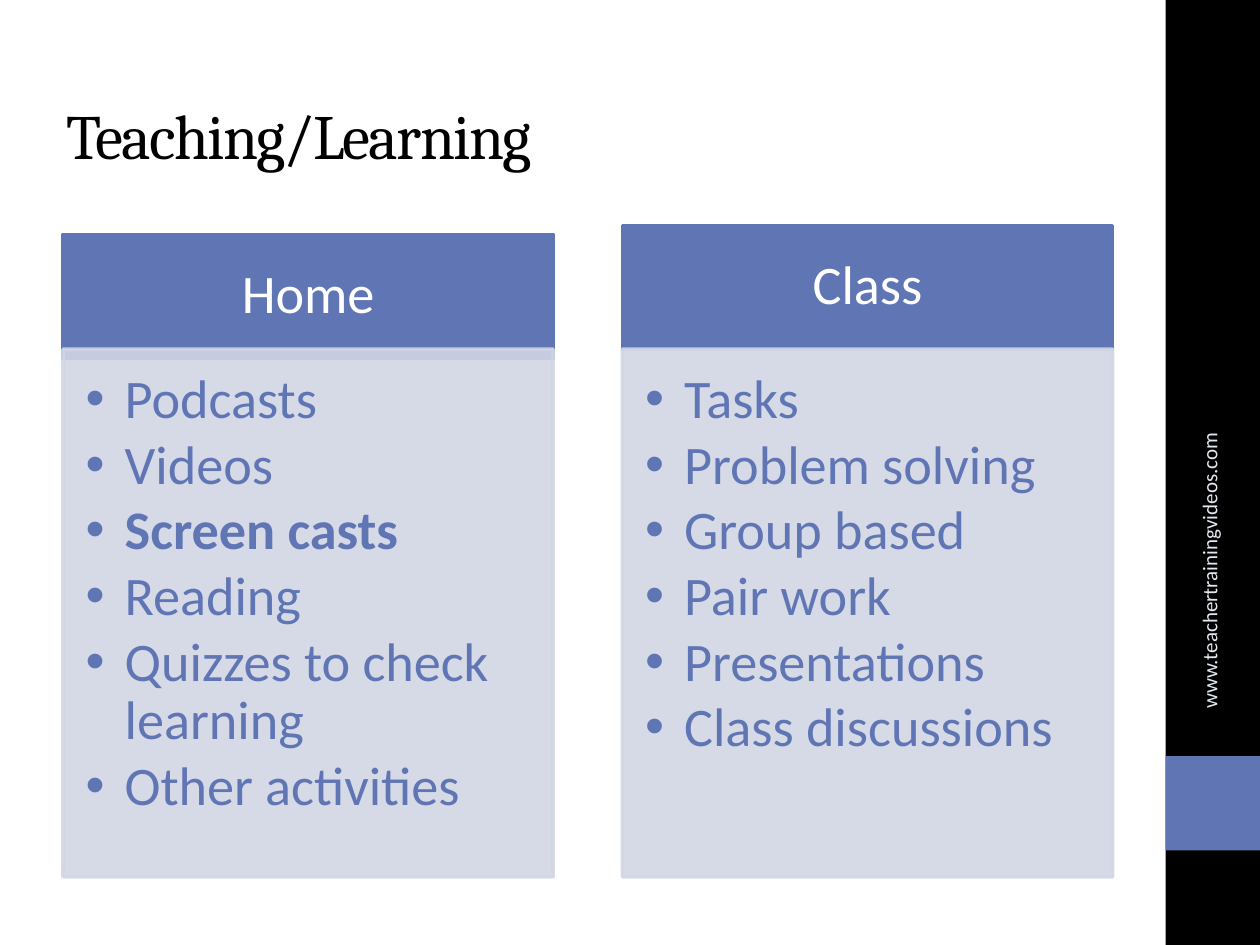
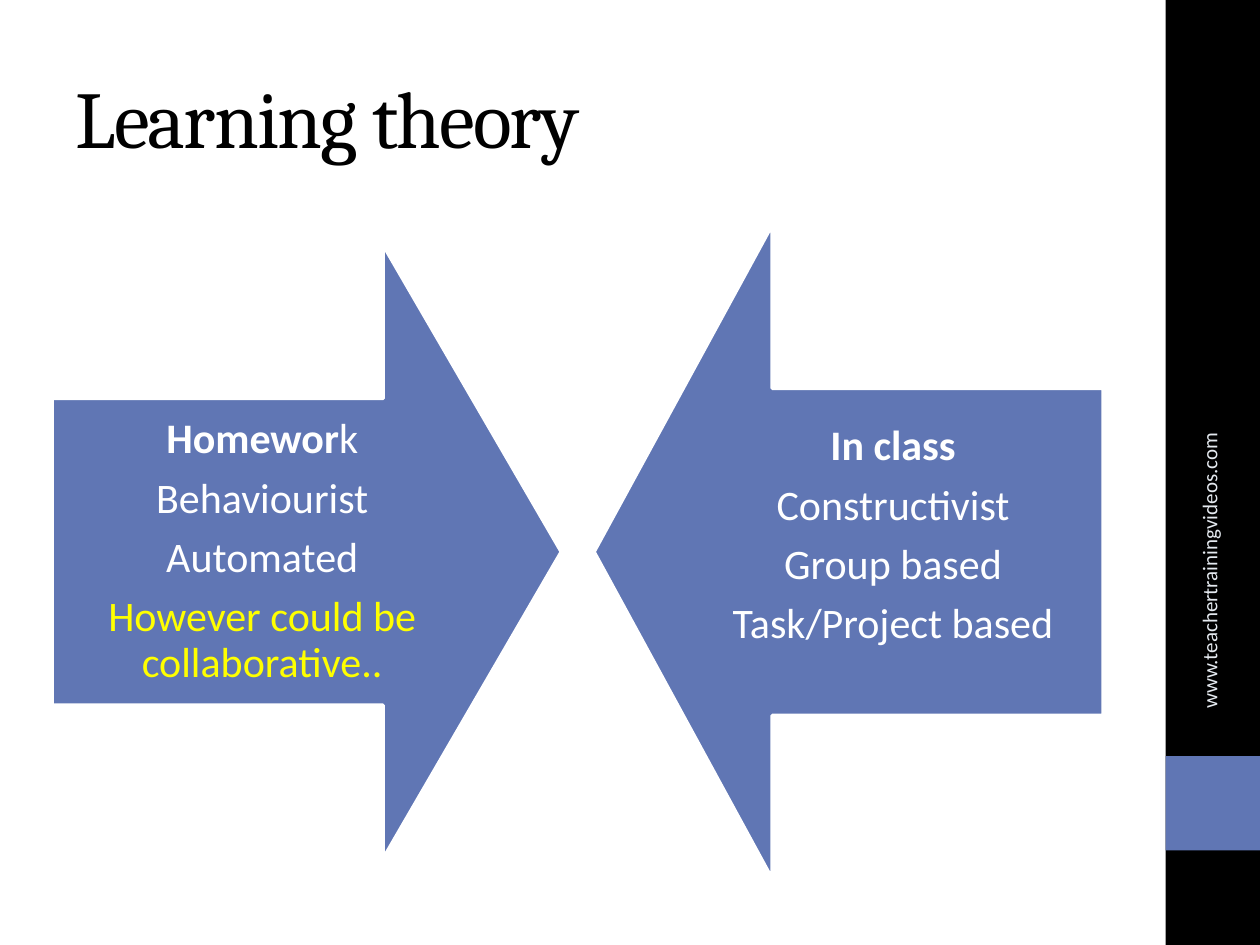
import pptx
import pptx.util
import pptx.dml.color
import pptx.enum.shapes
import pptx.enum.text
import pptx.oxml.ns
import lxml.etree

RGB = pptx.dml.color.RGBColor
BLACK = RGB(0x00, 0x00, 0x00)
WHITE = RGB(0xFF, 0xFF, 0xFF)
BLUE = RGB(0x60, 0x76, 0xB4)
PALE = RGB(0xD2, 0xD6, 0xE5)
MIST = RGB(0xE4, 0xE9, 0xEF)
YELLOW = RGB(0xFF, 0xFF, 0x00)

HEAD, TEXT = "Cambria", "Calibri"
KIND = pptx.enum.shapes.MSO_SHAPE
ALIGN = pptx.enum.text.PP_ALIGN
ANCHOR = pptx.enum.text.MSO_ANCHOR

# Grid of square cells
COLS, ROWS = 100, 75
WIDE, HIGH = pptx.util.Inches(10), pptx.util.Inches(7.5)
CELL = WIDE / COLS

# Layouts of the default template
PAIR, PLAIN = 4, 5


def cells(*sizes):
    return [round(size * CELL) for size in sizes]


def place(shape, box):
    shape.left, shape.top, shape.width, shape.height = cells(*box)


def paint(shape, fill, line=None, width=2):
    shape.fill.solid()
    shape.fill.fore_color.rgb = fill
    if line is None:
        shape.line.fill.background()
    else:
        shape.line.color.rgb = line
        shape.line.width = pptx.util.Pt(width)


def draw(slide, kind, box, fill, line=None):
    shape = slide.shapes.add_shape(kind, *cells(*box))
    shape.shadow.inherit = False
    paint(shape, fill, line)
    return shape


def fade(shape, share):
    """Make fill and line let the given share of their colour show."""
    tag = pptx.oxml.ns.qn("a:alpha")
    for color in shape.element.spPr.iter(pptx.oxml.ns.qn("a:srgbClr")):
        lxml.etree.SubElement(color, tag, val=str(round(share * 100000)))


def write(shape, lines, size=24, color=WHITE, font=TEXT, align=ALIGN.LEFT,
          anchor=ANCHOR.MIDDLE, pad=(1, 0.5, 1, 0.5), gap=0, lead=None,
          indent=None, track=None):
    """Fill a shape with lines; a line is a string or a list of (text, format)."""
    frame = shape.text_frame
    frame.word_wrap = True
    frame.auto_size = pptx.enum.text.MSO_AUTO_SIZE.NONE
    frame.vertical_anchor = anchor
    (frame.margin_left, frame.margin_top,
     frame.margin_right, frame.margin_bottom) = cells(*pad)
    for i, line in enumerate(lines):
        para = frame.add_paragraph() if i else frame.paragraphs[0]
        para.alignment = align
        para.space_before = pptx.util.Pt(0)
        para.space_after = pptx.util.Pt(gap)
        para.line_spacing = lead
        if indent is not None:
            props = para._p.get_or_add_pPr()
            step = cells(indent)[0]
            props.set("marL", str(step))
            props.set("indent", str(-step))
        for part, form in [(line, {})] if isinstance(line, str) else line:
            run = para.add_run()
            run.text = part
            run.font.name = font
            run.font.size = pptx.util.Pt(size)
            run.font.bold = form.get("bold", False)
            run.font.color.rgb = form.get("color", color)
            if track is not None:
                run.font._element.set("spc", str(track * 100))


def band(deck, slide):
    """Put the side band on the master, so that all slides share it."""
    side = 92.5
    wide = COLS - side
    tree = deck.slide_master.shapes.element
    for i, (box, fill) in enumerate([((side, 0, wide, ROWS), BLACK),
                                     ((side, 60, wide, wide), BLUE)]):
        shape = draw(slide, KIND.RECTANGLE, box, fill)
        shape.element.xpath("./p:nvSpPr/p:cNvPr")[0].set("id", str(101 + i))
        tree.append(shape.element)


def top(slide, text, left, y, size):
    title = slide.shapes.title
    place(title, (left, y, 48.1, 12.5))
    write(title, [text], size=size, color=BLACK, font=HEAD, track=-1)


def site(slide):
    box = slide.shapes.add_textbox(*cells(83, 44.3, 25.9, 4))
    box.rotation = 270
    write(box, ["www.teachertrainingvideos.com"], size=12, color=MIST,
          align=ALIGN.RIGHT)


def column(head, body, box, rise, name, items):
    """Header over a list; rise is how far the header stands above the list."""
    x, y, w, h = box
    place(head, (x, y - rise, w, 9.8))
    paint(head, BLUE, BLUE)
    write(head, [name], size=31, align=ALIGN.CENTER, lead=0.9, indent=0,
          pad=(2.4, 1.4, 2.4, 1.4))
    place(body, box)
    paint(body, PALE, PALE)
    fade(body, 0.9)
    write(body, items, size=31, color=BLUE, anchor=ANCHOR.TOP, lead=0.9,
          gap=4, indent=3.1, pad=(1.8, 1.8, 2.4, 2.7))


def arrow(slide, kind, box, lines, low=1.9):
    """Arrow with text; low is the inset below the text."""
    shape = draw(slide, kind, box, BLUE, WHITE)
    shape.adjustments[0] = 0.5
    shape.adjustments[1] = 0.35
    write(shape, lines, align=ALIGN.CENTER, lead=0.9, gap=8,
          pad=(1.9, 1.9, 1.9, low))


def places(deck):
    slide = deck.slides.add_slide(deck.slide_layouts[PAIR])
    band(deck, slide)
    top(slide, "Teaching/Learning", 4.3, 4.4, 36)
    parts = [
        (9.1, "Home", ["Podcasts", "Videos",
                       [("Screen casts", {"bold": True})], "Reading",
                       "Quizzes to check learning", "Other activities"]),
        (9.8, "Class", ["Tasks", "Problem solving", "Group based",
                        "Pair work", "Presentations", "Class discussions"]),
    ]
    hold = slide.placeholders
    for i, (rise, name, items) in enumerate(parts):
        box = (5 + i * 44.4, 27.7, 38.9, 41.9)
        column(hold[1 + 2 * i], hold[2 + 2 * i], box, rise, name, items)
    site(slide)


def theory(deck):
    slide = deck.slides.add_slide(deck.slide_layouts[PLAIN])
    top(slide, "Learning theory", 5, 3, 46)
    mid, wide = 43.8, 40.4
    bold = {"bold": True}
    parts = [
        (KIND.RIGHT_ARROW, 4.15, 48.7, 1.9,
         [[("Homewor", bold), ("k", {})], "Behaviourist", "Automated",
          [("However could be collaborative..", {"color": YELLOW})]]),
        (KIND.LEFT_ARROW, 47.15, 51.9, 4.4,
         [[("In class", bold)], "Constructivist", "Group based",
          "Task/Project based"]),
    ]
    for kind, x, high, low, lines in parts:
        arrow(slide, kind, (x, mid - high / 2, wide, high), lines, low)
    site(slide)


def main():
    deck = pptx.Presentation()
    deck.slide_width, deck.slide_height = WIDE, HIGH
    places(deck)
    theory(deck)
    # Drop the date, footer and number places if any are empty
    for slide in deck.slides:
        for shape in list(slide.placeholders):
            if not shape.text_frame.text:
                shape.element.getparent().remove(shape.element)
    deck.save("out.pptx")


if __name__ == "__main__":
    main()
